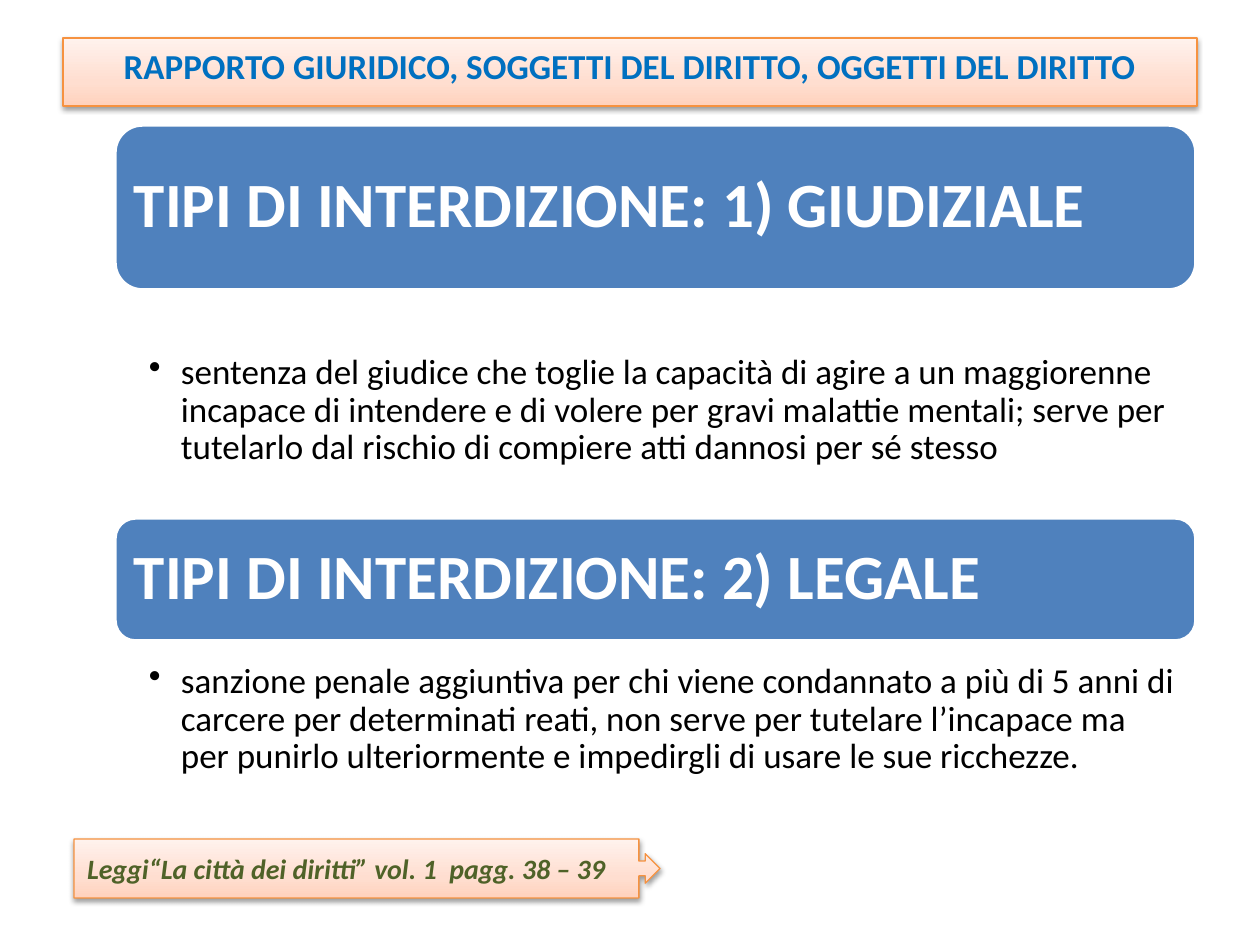
from lxml import etree
from pptx import Presentation
from pptx.dml.color import RGBColor
from pptx.enum.shapes import MSO_SHAPE
from pptx.enum.text import MSO_ANCHOR, PP_ALIGN
from pptx.oxml.ns import qn
from pptx.util import Emu, Pt

RECT = MSO_SHAPE.RECTANGLE
ROUND = MSO_SHAPE.ROUNDED_RECTANGLE
CALLOUT = MSO_SHAPE.RIGHT_ARROW_CALLOUT
TOP, MIDDLE = MSO_ANCHOR.TOP, MSO_ANCHOR.MIDDLE
LEFT, CENTER = PP_ALIGN.LEFT, PP_ALIGN.CENTER

FONT = "Calibri"
COLORS = {
    "blue": "4F81BD", "white": "FFFFFF", "black": "000000",
    "title": "0070C0", "green": "4F6228", "orange": "F69240",
}
PEACH_STOPS = [(0, "FFD2BD"), (35, "FFDED0"), (100, "FFF2ED")]
BAR_X, BAR_W = 115, 1081
SECTIONS = [
    ("TIPI DI INTERDIZIONE: 1) GIUDIZIALE", 125, 165,
     "sentenza del giudice\u00a0che toglie la capacità di agire a un maggiorenne "
     "incapace di intendere e di volere per gravi malattie mentali; serve per "
     "tutelarlo dal rischio di compiere atti dannosi per sé stesso", 350, 149),
    ("TIPI DI INTERDIZIONE: 2) LEGALE", 518, 123,
     "sanzione penale aggiuntiva per chi viene condannato a più di 5 anni di "
     "carcere per determinati reati, non serve per tutelare l’incapace ma "
     "per punirlo ulteriormente e impedirgli di usare le sue ricchezze.", 659, 116),
]


def px(n):
    return Emu(round(n * 914400 / 126))


def rgb(name):
    return RGBColor.from_string(COLORS[name])


def add_sub(parent, tag, **attrs):
    return etree.SubElement(parent, qn(tag), {k: str(v) for k, v in attrs.items()})


def write(s, text, size, color, bold=False, italic=False, align=LEFT,
          anchor=TOP, insets=(13, 6, 13, 6)):
    tf = s.text_frame
    tf.word_wrap = True
    tf.vertical_anchor = anchor
    tf.margin_left, tf.margin_top, tf.margin_right, tf.margin_bottom = map(px, insets)
    p = tf.paragraphs[0]
    p.alignment = align
    r = p.add_run()
    r.text = text
    r.font.name, r.font.size = FONT, Pt(size)
    r.font.bold, r.font.italic = bold, italic
    r.font.color.rgb = rgb(color)
    return p


def add_box(slide, kind, x, y, w, h, line, width):
    s = slide.shapes.add_shape(kind, px(x), px(y), px(w), px(h))
    s.shadow.inherit = False
    s.line.color.rgb = rgb(line)
    s.line.width = Pt(width)
    return s


def add_peach_box(slide, kind, x, y, w, h):
    s = add_box(slide, kind, x, y, w, h, "orange", 0.75)
    s.fill.gradient()
    s.fill.gradient_angle = 90
    stops = s._element.spPr.find(".//" + qn("a:gsLst"))
    for stop in list(stops):
        stops.remove(stop)
    for pos, color in PEACH_STOPS:
        add_sub(add_sub(stops, "a:gs", pos=pos * 1000), "a:srgbClr", val=color)
    effects = s._element.spPr.find(qn("a:effectLst"))
    shadow = add_sub(effects, "a:outerShdw", blurRad=Pt(3.1), dist=Pt(1.6),
                     dir=5400000, rotWithShape=0)
    add_sub(add_sub(shadow, "a:srgbClr", val=COLORS["black"]), "a:alpha", val=38000)
    return s


def add_heading(slide, text, y, h):
    s = add_box(slide, ROUND, BAR_X, y, BAR_W, h, "white", 2)
    s.fill.solid()
    s.fill.fore_color.rgb = rgb("blue")
    side = 19 - round(h * 0.05)
    p = write(s, text, 36, "white", bold=True, anchor=MIDDLE,
              insets=(side, side, side, side))
    p.line_spacing = 0.9


def add_bullet(slide, text, y, h):
    s = slide.shapes.add_textbox(px(BAR_X), px(y), px(BAR_W), px(h))
    p = write(s, text, 20, "black", insets=(34, 4, 20, 4))
    p.level = 1
    p.line_spacing = 0.9
    pPr = p._p.get_or_add_pPr()
    pPr.set("marL", str(px(32)))
    pPr.set("indent", str(px(-32)))
    add_sub(pPr, "a:buChar", char="•")


def main():
    prs = Presentation()
    prs.slide_width, prs.slide_height = px(1260), px(945)
    slide = prs.slides.add_slide(prs.slide_layouts[6])

    title = add_peach_box(slide, RECT, 63, 38, 1134, 68)
    write(title, "RAPPORTO GIURIDICO, SOGGETTI DEL DIRITTO, OGGETTI DEL DIRITTO",
          20, "title", bold=True, align=CENTER)

    reading = add_peach_box(slide, CALLOUT, 74, 839, 586, 59)
    reading.adjustments[3] = 0.964
    write(reading, "Leggi“La città dei diritti” vol. 1  pagg. 38 – 39",
          16, "green", bold=True, italic=True, anchor=MIDDLE)

    for heading, bar_y, bar_h, body, body_y, body_h in SECTIONS:
        add_heading(slide, heading, bar_y, bar_h)
        add_bullet(slide, body, body_y, body_h)

    prs.save("out.pptx")


if __name__ == "__main__":
    main()
